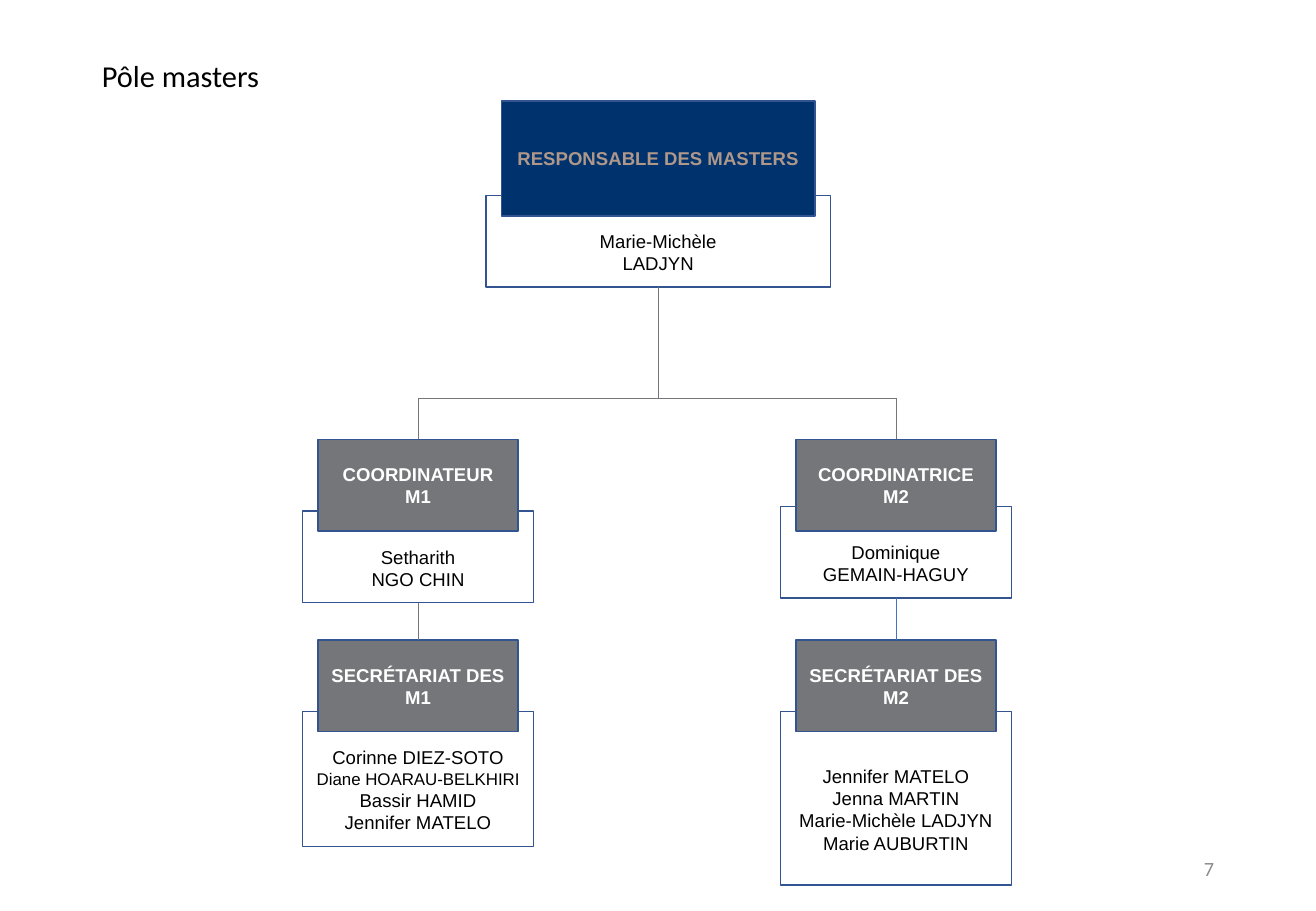
import pptx
import pptx.dml.color
import pptx.enum.shapes
import pptx.enum.text
import pptx.oxml.ns
import pptx.util
from lxml import etree

Cm = pptx.util.Cm
Pt = pptx.util.Pt
RGBColor = pptx.dml.color.RGBColor
Align = pptx.enum.text.PP_ALIGN

NAVY = RGBColor(0x00, 0x32, 0x6E)
SAND = RGBColor(0xAF, 0x98, 0x89)
GREY = RGBColor(0x74, 0x76, 0x79)
BORDER = RGBColor(0x32, 0x54, 0x91)
BLUE = RGBColor(0x44, 0x72, 0xC4)
PAGE_GREY = RGBColor(0x8C, 0x8C, 0x8C)
WHITE = RGBColor(0xFF, 0xFF, 0xFF)
BLACK = RGBColor(0, 0, 0)

TITLE = ("Pôle masters", (1.88, 1.07, 23.72, 1.02), 18, BLACK, Align.LEFT)
PAGE_NUMBER = ("7", (19.43, 17.65, 6.2, 1.02), 12, PAGE_GREY, Align.RIGHT)

HEAD = {"role_size": (4.19, 1.91), "people_width": 4.83, "fill": GREY, "color": WHITE}
TOP_HEAD = {"role_size": (6.55, 2.41), "people_width": 7.21, "fill": NAVY, "color": SAND}

MANAGER = {"role": "RESPONSABLE DES MASTERS", "role_top": 2.11,
           "people": [("Marie-Michèle", 11), ("LADJYN", 11)],
           "people_top": 4.09, "people_height": 1.91}
BRANCHES = [
    (8.74, GREY, [
        {"role": "COORDINATEUR M1", "role_top": 9.19,
         "people": [("Setharith", 11), ("NGO CHIN", 11)],
         "people_top": 10.69, "people_height": 1.91},
        {"role": "SECRÉTARIAT DES M1", "role_top": 13.39,
         "people": [("Corinne DIEZ-SOTO", 11), ("Diane HOARAU-BELKHIRI", 10),
                    ("Bassir HAMID", 11), ("Jennifer MATELO", 11)],
         "people_top": 14.88, "people_height": 2.82},
    ]),
    (18.73, BLUE, [
        {"role": "COORDINATRICE M2", "role_top": 9.19,
         "people": [("Dominique", 11), ("GEMAIN-HAGUY", 11)],
         "people_top": 10.59, "people_height": 1.91},
        {"role": "SECRÉTARIAT DES M2", "role_top": 13.39,
         "people": [("Jennifer MATELO", 11), ("Jenna MARTIN", 11),
                    ("Marie-Michèle LADJYN", 11), ("Marie AUBURTIN", 11)],
         "people_top": 14.88, "people_height": 3.63},
    ]),
]
MANAGER_CENTER = 13.76
BRANCH_LINE_Y = 8.33
PEOPLE_TOP_MARGIN = 0.58


def write(frame, lines, color, align, font="Arial", bold=False):
    frame.word_wrap = True
    frame.vertical_anchor = pptx.enum.text.MSO_ANCHOR.MIDDLE
    for index, (text, size) in enumerate(lines):
        paragraph = frame.add_paragraph() if index else frame.paragraphs[0]
        paragraph.text = text
        paragraph.alignment = align
        paragraph.font.name = font
        paragraph.font.size = Pt(size)
        paragraph.font.bold = bold
        paragraph.font.color.rgb = color


def add_label(slide, text, place, size, color, align):
    label = slide.shapes.add_textbox(*map(Cm, place))
    write(label.text_frame, [(text, size)], color, align, "Calibri")


def add_box(slide, center, top, width, height, fill=None):
    box = slide.shapes.add_shape(
        pptx.enum.shapes.MSO_SHAPE.RECTANGLE,
        Cm(center - width / 2), Cm(top), Cm(width), Cm(height))
    box.shadow.inherit = False
    box.line.color.rgb = BORDER
    box.line.width = Pt(1)
    if fill is None:
        box.fill.background()
    else:
        box.fill.solid()
        box.fill.fore_color.rgb = fill
    return box


def add_post(slide, center, post, head):
    people = add_box(slide, center, post["people_top"],
                     head["people_width"], post["people_height"])
    write(people.text_frame, post["people"], BLACK, Align.CENTER)
    people.text_frame.margin_top = Cm(PEOPLE_TOP_MARGIN)
    role = add_box(slide, center, post["role_top"], *head["role_size"], head["fill"])
    write(role.text_frame, [(post["role"], 11)], head["color"], Align.CENTER, bold=True)
    return role, people


def add_link(slide, start, end, color=GREY, above=None, below=None):
    link = slide.shapes.add_connector(
        pptx.enum.shapes.MSO_CONNECTOR.STRAIGHT, *map(Cm, start + end))
    link.line.color.rgb = color
    link.line.width = Pt(0.5)
    etree.SubElement(link._element.spPr, pptx.oxml.ns.qn("a:effectLst"))
    if above is not None:
        link.begin_connect(above, 2)
    if below is not None:
        link.end_connect(below, 0)


def main():
    deck = pptx.Presentation()
    deck.slide_width, deck.slide_height = Cm(27.51), Cm(19.05)
    slide = deck.slides.add_slide(deck.slide_layouts[6])

    for label in (TITLE, PAGE_NUMBER):
        add_label(slide, *label)

    _, manager = add_post(slide, MANAGER_CENTER, MANAGER, TOP_HEAD)
    manager_bottom = MANAGER["people_top"] + MANAGER["people_height"]
    add_link(slide, (MANAGER_CENTER, manager_bottom),
             (MANAGER_CENTER, BRANCH_LINE_Y), above=manager)
    add_link(slide, (BRANCHES[0][0], BRANCH_LINE_Y), (BRANCHES[-1][0], BRANCH_LINE_Y))

    for center, lower_color, posts in BRANCHES:
        above, bottom, color = None, BRANCH_LINE_Y, GREY
        for post in posts:
            role, people = add_post(slide, center, post, HEAD)
            add_link(slide, (center, bottom), (center, post["role_top"]),
                     color, above, role)
            above, color = people, lower_color
            bottom = post["people_top"] + post["people_height"]

    deck.save("out.pptx")


if __name__ == "__main__":
    main()
